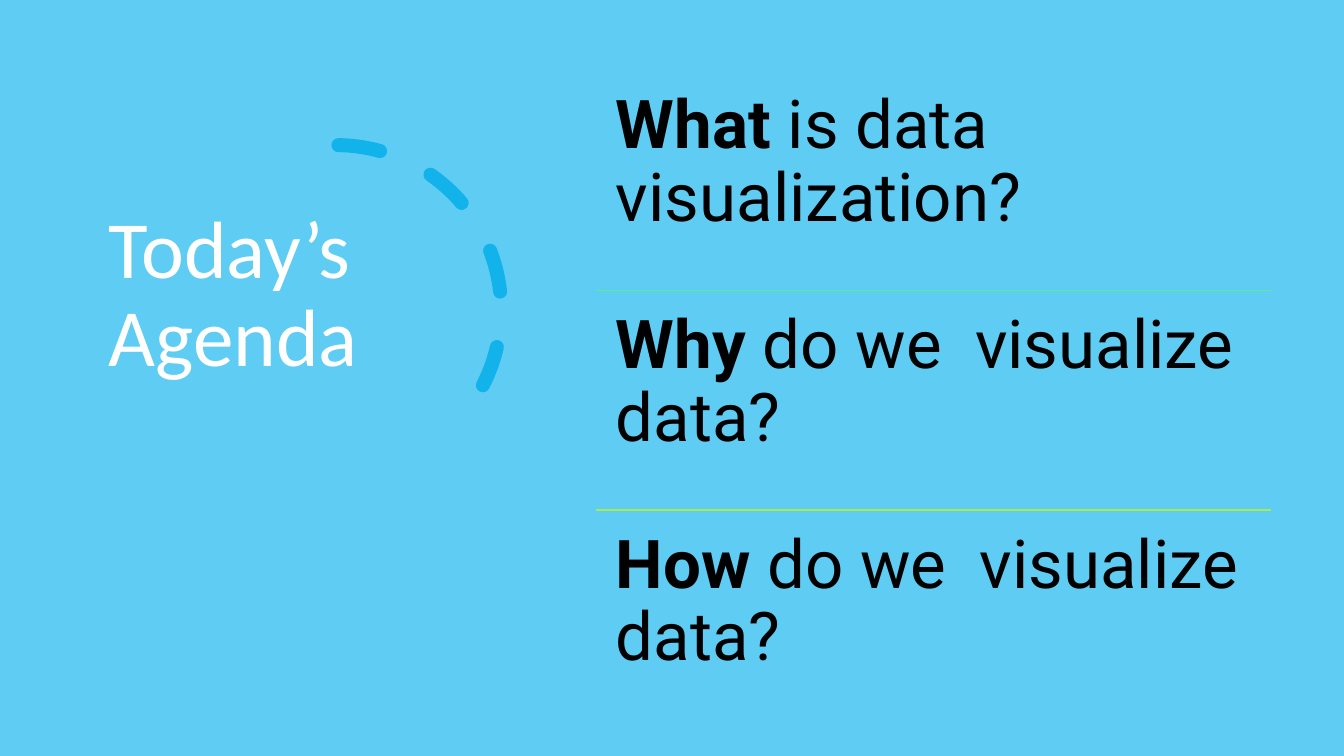
from lxml import etree
from pptx import Presentation
from pptx.dml.color import RGBColor
from pptx.enum.dml import MSO_LINE
from pptx.enum.shapes import MSO_CONNECTOR, MSO_SHAPE
from pptx.enum.text import MSO_ANCHOR, MSO_AUTO_SIZE, PP_ALIGN
from pptx.oxml.ns import qn
from pptx.util import Inches, Pt


def color(hex_code):
    return RGBColor.from_string(hex_code)


def add_run(paragraph, text, font_name, size, hex_code, bold=False):
    run = paragraph.add_run()
    run.text = text
    run.font.name = font_name
    run.font.size = Pt(size)
    run.font.bold = bold
    run.font.color.rgb = color(hex_code)


prs = Presentation()
prs.slide_width = Inches(13.33)
prs.slide_height = Inches(7.5)
slide = prs.slides.add_slide(prs.slide_layouts[5])
heading = slide.shapes.title

backdrop = slide.shapes.add_shape(
    MSO_SHAPE.RECTANGLE, 0, 0, prs.slide_width, prs.slide_height)
backdrop.shadow.inherit = False
backdrop.fill.solid()
backdrop.fill.fore_color.rgb = color("5ECCF3")
backdrop.line.fill.background()

dashed_arc = slide.shapes.add_shape(
    MSO_SHAPE.ARC, Inches(1.7), Inches(1.44), Inches(3.27), Inches(3.27))
dashed_arc.adjustments[0] = 146.13
dashed_arc.adjustments[1] = 0
dashed_arc.rotation = 27.2
dashed_arc.shadow.inherit = False
dashed_arc.fill.background()
dashed_arc.line.color.rgb = color("12B2EB")
dashed_arc.line.width = Pt(10)
dashed_arc.line.dash_style = MSO_LINE.DASH
dashed_arc.line._ln.set("cap", "rnd")

dashed_arc._element.addnext(heading._element)
heading.left, heading.top = Inches(0.98), Inches(-0.11)
heading.width, heading.height = Inches(3.23), Inches(6.09)
heading.text_frame.word_wrap = True
heading.text_frame.auto_size = MSO_AUTO_SIZE.NONE
heading.text_frame.vertical_anchor = MSO_ANCHOR.MIDDLE
heading_line = heading.text_frame.paragraphs[0]
heading_line.alignment = PP_ALIGN.LEFT
heading_line.line_spacing = 0.9
add_run(heading_line, "Today’s Agenda", "Calibri", 58, "FFFFFF")

agenda = [
    ("What", " is data visualization?", None),
    ("Why", " do we  visualize data?", "58EF8D"),
    ("How", " do we  visualize data?", "A7EA52"),
]
agenda_left, agenda_top = 5.91, 0.7
agenda_width, row_height = 6.7, 2.18

for row, (keyword, question, divider_color) in enumerate(agenda):
    row_top = Inches(agenda_top + row * row_height)

    if divider_color:
        divider = slide.shapes.add_connector(
            MSO_CONNECTOR.STRAIGHT, Inches(agenda_left), row_top,
            Inches(agenda_left + agenda_width), row_top)
        divider.line.color.rgb = color(divider_color)
        divider.line.width = Pt(1)
        etree.SubElement(divider._element.spPr, qn("a:effectLst"))

    topic = slide.shapes.add_textbox(
        Inches(agenda_left), row_top, Inches(agenda_width), Inches(row_height))
    frame = topic.text_frame
    frame.word_wrap = True
    frame.margin_left = frame.margin_right = Inches(0.2)
    frame.margin_top = frame.margin_bottom = Inches(0.2)
    topic_line = frame.paragraphs[0]
    topic_line.line_spacing = 0.9
    add_run(topic_line, keyword, "Roboto", 48, "000000", bold=True)
    add_run(topic_line, question, "Roboto", 48, "000000")

prs.save("out.pptx")
